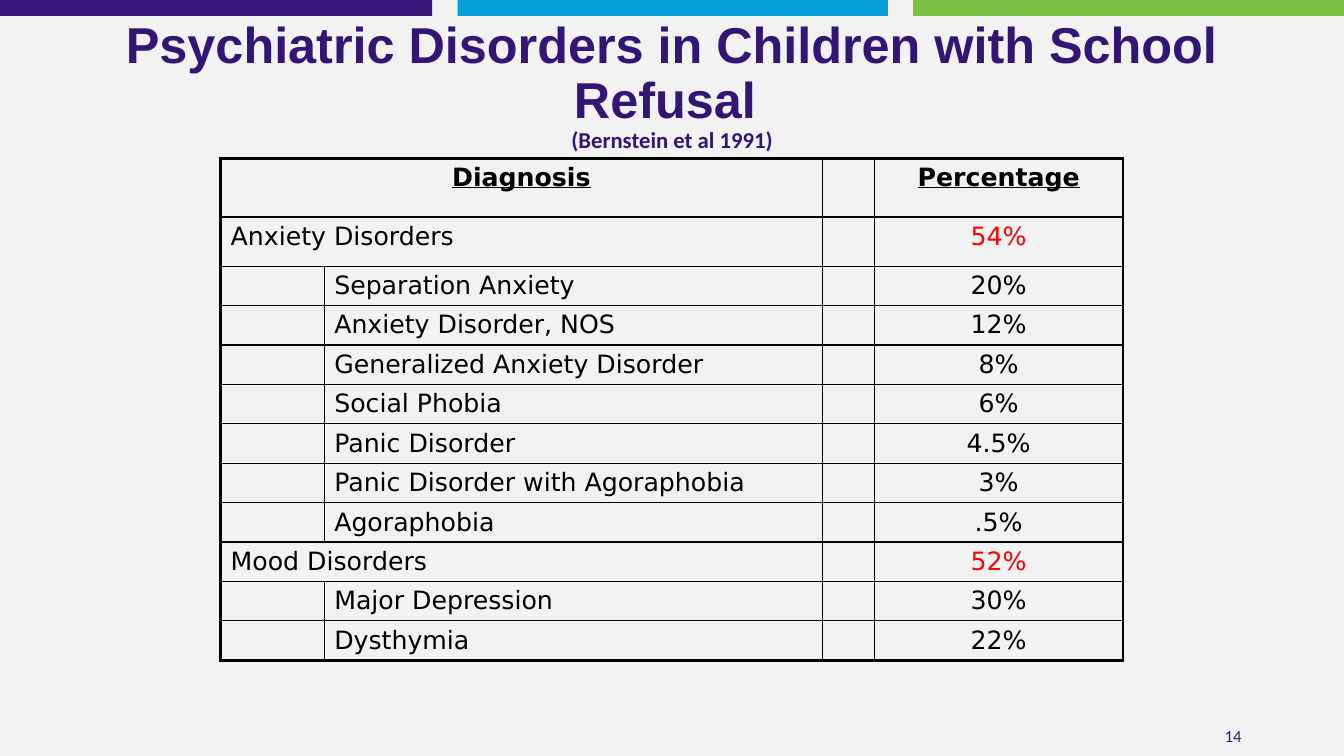
from lxml.etree import SubElement
from pptx import Presentation
from pptx.dml.color import RGBColor
from pptx.enum.shapes import MSO_SHAPE as Shape
from pptx.enum.text import MSO_ANCHOR as Anchor, MSO_AUTO_SIZE as AutoSize, PP_ALIGN as Align
from pptx.oxml.ns import qn
from pptx.util import Pt


def color(hex_code):
    return RGBColor.from_string(hex_code)


def add_run(para, text, size, font, hex_code, bold=False, underline=False):
    span = para.add_run()
    span.text = text
    span.font.size = Pt(size)
    span.font.name = font
    span.font.color.rgb = color(hex_code)
    span.font.bold = bold
    span.font.underline = underline


deck = Presentation()
deck.slide_width, deck.slide_height = Pt(960), Pt(540)
page = deck.slides.add_slide(deck.slide_layouts[5])
page.background.fill.solid()
page.background.fill.fore_color.rgb = color("F2F2F2")

# Coloured bars along the top edge
for left, width, hex_code in [(0, 308.6, "391378"), (326.9, 307.4, "049FDA"),
                              (652.3, 307.7, "7BBF43")]:
    bar = page.shapes.add_shape(Shape.RECTANGLE, Pt(left), 0, Pt(width), Pt(11.3))
    bar.shadow.inherit = False
    bar.fill.solid()
    bar.fill.fore_color.rgb = color(hex_code)
    bar.line.fill.background()

# Title with its citation
title = page.shapes.title
title.left, title.top, title.width, title.height = Pt(66), Pt(34), Pt(828), Pt(56)
title.text_frame.word_wrap = True
title.text_frame.auto_size = AutoSize.NONE
title.text_frame.vertical_anchor = Anchor.MIDDLE
para = title.text_frame.paragraphs[0]
para.alignment = Align.CENTER
para.line_spacing = 0.9
add_run(para, "Psychiatric Disorders in Children with School Refusal ",
        36, "Arial", "341575", bold=True)
para.add_line_break()
add_run(para, "(Bernstein et al 1991)", 16.2, "Calibri", "341575", bold=True)

# Table of diagnoses: group rows span the first two columns
GROUPS = {"Diagnosis", "Anxiety Disorders", "Mood Disorders"}
ROWS = [
    ("Diagnosis", "Percentage"),
    ("Anxiety Disorders", "54%"),
    ("Separation Anxiety", "20%"),
    ("Anxiety Disorder, NOS", "12%"),
    ("Generalized Anxiety Disorder", "8%"),
    ("Social Phobia", "6%"),
    ("Panic Disorder", "4.5%"),
    ("Panic Disorder with Agoraphobia", "3%"),
    ("Agoraphobia", ".5%"),
    ("Mood Disorders", "52%"),
    ("Major Depression", "30%"),
    ("Dysthymia", "22%"),
]
COLUMN_WIDTHS = [74, 355.7, 37.3, 177.6]
ROW_HEIGHTS = [42, 35.2] + [28.15] * 10
last_row, last_column = len(ROWS) - 1, len(COLUMN_WIDTHS) - 1

table = page.shapes.add_table(len(ROWS), len(COLUMN_WIDTHS), Pt(157.6), Pt(113),
                              Pt(sum(COLUMN_WIDTHS)), Pt(sum(ROW_HEIGHTS))).table
table.first_row = table.horz_banding = False
for column, width in zip(table.columns, COLUMN_WIDTHS):
    column.width = Pt(width)
for row, height in zip(table.rows, ROW_HEIGHTS):
    row.height = Pt(height)

for r, (diagnosis, percentage) in enumerate(ROWS):
    is_header, is_group = r == 0, diagnosis in GROUPS
    if is_group:
        table.cell(r, 0).merge(table.cell(r, 1))
    texts = {0 if is_group else 1: diagnosis, last_column: percentage}

    for c in range(len(COLUMN_WIDTHS)):
        cell = table.cell(r, c)
        para = cell.text_frame.paragraphs[0]
        if c in texts:
            is_red = is_group and not is_header and c == last_column
            if is_header or c == last_column:
                para.alignment = Align.CENTER
            add_run(para, texts[c], 18, "DejaVu Sans", "FF0000" if is_red else "000000",
                    bold=is_header, underline=is_header)
        else:
            # Small type keeps empty cells from stretching the row
            SubElement(para._p, qn("a:endParaRPr"), sz="1200")

        # Heavy outer frame, thin inner grid
        outer = {"L": c == 0, "R": c == last_column, "T": r == 0, "B": r == last_row}
        for side, is_outer in outer.items():
            line = SubElement(cell._tc.get_or_add_tcPr(), qn(f"a:ln{side}"),
                              w=str(Pt(2.25 if is_outer else 1)))
            fill = SubElement(line, qn("a:solidFill"))
            SubElement(fill, qn("a:srgbClr"), val="000000")
        cell.fill.background()

# Page number
box = page.shapes.add_textbox(Pt(678), Pt(511), Pt(216), Pt(29))
box.text_frame.word_wrap = True
box.text_frame.vertical_anchor = Anchor.MIDDLE
para = box.text_frame.paragraphs[0]
para.alignment = Align.RIGHT
add_run(para, "14", 12, "Calibri", "391378")

deck.save("out.pptx")
